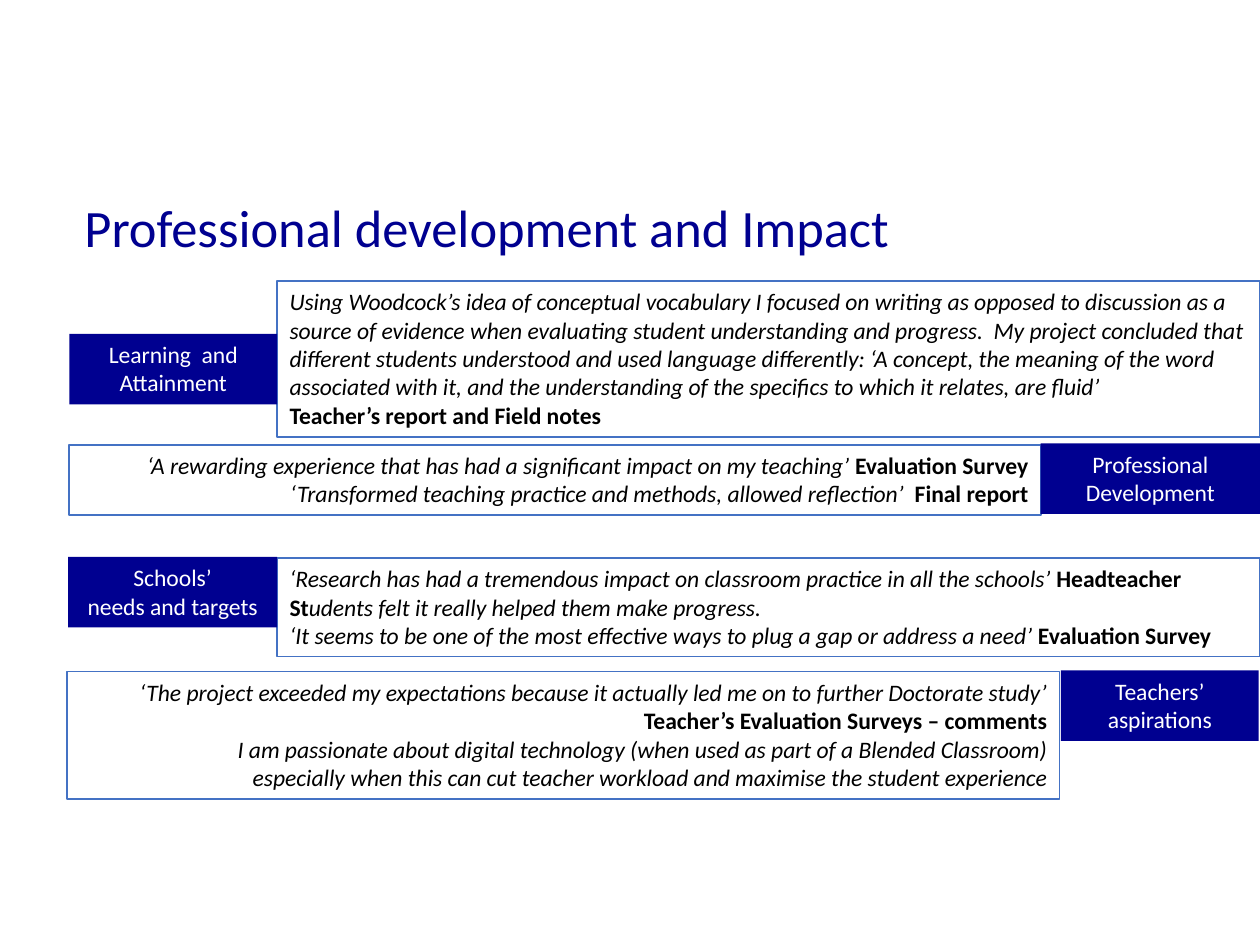
from pptx import Presentation
from pptx.dml.color import RGBColor
from pptx.enum.text import MSO_ANCHOR, MSO_AUTO_SIZE, PP_ALIGN as Align
from pptx.util import Inches, Pt

NAVY, BLUE, WHITE, BLACK = "000090", "4472C4", "FFFFFF", "000000"
FONT = "Calibri"
TITLE = "Professional development and Impact"

# Each theme: label lines and position, quote position and alignment,
# then quote paragraphs as (text, style) spans
QUOTE, SOURCE = "italic", "bold"
THEMES = [
    {
        "label": ["Learning  and", "Attainment"],
        "label_at": (0.55, 2.65, 1.65, 0.56),
        "quote_at": (2.2, 2.23, 7.8, 1.24),
        "align": Align.LEFT,
        "quotes": [
            [("Using Woodcock’s idea of conceptual vocabulary I focused on writing "
              "as opposed to discussion as a source of evidence when evaluating "
              "student understanding and progress.  My project concluded that "
              "different students understood and used language differently: "
              "‘A concept, the meaning of the word associated with it, and the "
              "understanding of the specifics to which it relates, are fluid’", QUOTE)],
            [("Teacher’s report and Field notes", SOURCE)],
        ],
    },
    {
        "label": ["Professional Development"],
        "label_at": (8.26, 3.52, 1.74, 0.56),
        "quote_at": (0.55, 3.53, 7.71, 0.56),
        "align": Align.RIGHT,
        "quotes": [
            [("‘A rewarding experience that has had a significant impact on my teaching’ ", QUOTE),
             ("Evaluation Survey ", SOURCE),
             ("‘Transformed teaching practice and methods, allowed reflection’ ", QUOTE),
             (" Final report", SOURCE)],
        ],
    },
    {
        "label": ["Schools’", "needs and targets"],
        "label_at": (0.54, 4.42, 1.66, 0.56),
        "quote_at": (2.2, 4.43, 7.8, 0.78),
        "align": Align.LEFT,
        "quotes": [
            [("‘Research has had a tremendous impact on classroom practice in all the schools’ ", QUOTE),
             ("Headteacher", SOURCE)],
            [("St", SOURCE),
             ("udents felt it really helped them make progress.", QUOTE)],
            [("‘It seems to be one of the most effective ways to plug a gap or address a need’ ", QUOTE),
             ("Evaluation Survey", SOURCE)],
        ],
    },
    {
        "label": ["Teachers’ aspirations"],
        "label_at": (8.42, 5.32, 1.57, 0.56),
        "quote_at": (0.53, 5.33, 7.88, 1.01),
        "align": Align.RIGHT,
        "quotes": [
            [("‘The project exceeded my expectations because it actually led me on to "
              "further Doctorate study’", QUOTE)],
            [("Teacher’s Evaluation Surveys – comments", SOURCE)],
            [("I am passionate about digital technology (when used as part of a "
              "Blended Classroom)", QUOTE)],
            [("especially when this can cut teacher workload and maximise the student "
              "experience", QUOTE)],
        ],
    },
]


def paint(target, color):
    """Give a fill a solid colour."""
    target.solid()
    target.fore_color.rgb = RGBColor.from_string(color)


def style_font(font, size, color):
    font.name = FONT
    font.size = Pt(size)
    paint(font.fill, color)


def add_box(page, position, paragraphs, align, fill, color, line=None):
    box = page.shapes.add_textbox(*map(Inches, position))
    paint(box.fill, fill)
    if line:
        paint(box.line.fill, line)
        box.line.width = Pt(1)
    frame = box.text_frame
    frame.word_wrap = True
    frame.auto_size = MSO_AUTO_SIZE.SHAPE_TO_FIT_TEXT
    for number, spans in enumerate(paragraphs):
        para = frame.add_paragraph() if number else frame.paragraphs[0]
        para.alignment = align
        for text, style in spans:
            span = para.add_run()
            span.text = text
            style_font(span.font, 13.5, color)
            span.font.italic = style == QUOTE
            span.font.bold = style == SOURCE


def main():
    deck = Presentation()
    deck.slide_width, deck.slide_height = Inches(10), Inches(7.5)
    page = deck.slides.add_slide(deck.slide_layouts[5])

    # Title
    title = page.shapes.title
    title.left, title.top, title.width, title.height = map(Inches, (0.57, 1.37, 8.99, 0.92))
    title.text_frame.text = TITLE
    title.text_frame.vertical_anchor = MSO_ANCHOR.MIDDLE
    heading = title.text_frame.paragraphs[0]
    heading.alignment = Align.LEFT
    heading.line_spacing = 0.9
    style_font(heading.runs[0].font, 30, NAVY)

    # Quotes with their theme labels
    for theme in THEMES:
        add_box(page, theme["quote_at"], theme["quotes"], theme["align"], WHITE, BLACK, BLUE)
        label = [[(text, None)] for text in theme["label"]]
        add_box(page, theme["label_at"], label, Align.CENTER, NAVY, WHITE)

    deck.save("out.pptx")


if __name__ == "__main__":
    main()
